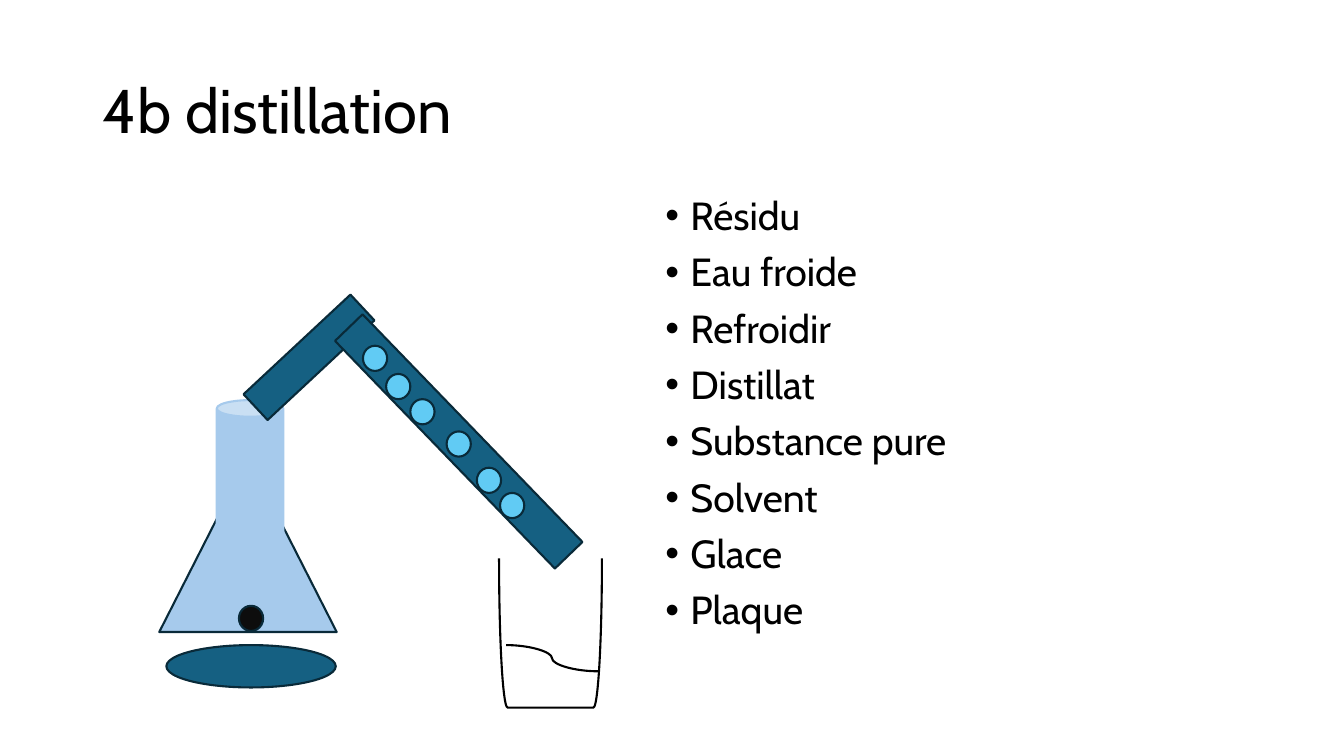
"""Build a slide showing a distillation set-up beside its vocabulary list."""
from dataclasses import dataclass
from typing import Optional

from lxml import etree
from pptx import Presentation
from pptx import util as u
from pptx.dml.color import RGBColor
from pptx.enum import shapes, text
from pptx.oxml.ns import qn

COLORS = {
    "text": "000000", "glass": "A6CAEC", "pipe": "156082",
    "edge": "092A39", "bubble": "61CBF4", "residue": "0D0D0D",
}
FONT = "Cabin"
WORDS = ["Résidu", "Eau froide", "Refroidir", "Distillat",
         "Substance pure", "Solvent", "Glace", "Plaque"]
DROP_SIZE = (0.24, 0.25)
KIND = shapes.MSO_SHAPE


@dataclass
class Part:
    """A preset shape of the apparatus, in inches and degrees."""
    kind: KIND
    left: float
    top: float
    width: float
    height: float
    fill: Optional[str]
    line: str = "edge"
    rotation: float = 0


def drop(left: float, top: float, fill: str = "bubble") -> Part:
    """Describe one small round drop."""
    return Part(KIND.OVAL, left, top, *DROP_SIZE, fill)


APPARATUS = [
    Part(KIND.ISOSCELES_TRIANGLE, 1.58, 4.54, 1.76, 1.73, "glass"),
    Part(KIND.CAN, 2.15, 3.97, 0.66, 1.84, "glass", "glass"),
    Part(KIND.OVAL, 1.65, 6.4, 1.68, 0.42, "pipe"),
    Part(KIND.RECTANGLE, 2.34, 3.37, 1.45, 0.35, "pipe", rotation=317),
    Part(KIND.RECTANGLE, 2.98, 4.19, 3.14, 0.38, "pipe", rotation=46),
    Part(KIND.LEFT_BRACKET, 4.72, 5.77, 1.48, 1.02, None, "text", 270),
    *(drop(x, y) for x, y in [(3.6, 3.43), (4.96, 4.89), (4.73, 4.64),
                              (4.43, 4.28), (4.07, 3.96), (3.83, 3.71)]),
    drop(2.37, 6.01, "residue"),
]


def rgb(name: str) -> RGBColor:
    """Look up a named colour."""
    return RGBColor.from_string(COLORS[name])


def set_line(sp, color: str) -> None:
    """Give a shape or connector its outline."""
    sp.line.color.rgb = rgb(color)
    sp.line.width = u.Pt(1.5)


def add_part(s, part: Part) -> None:
    """Draw one part of the apparatus."""
    box = (part.left, part.top, part.width, part.height)
    sp = s.shapes.add_shape(part.kind, *map(u.Inches, box))
    sp.shadow.inherit = False
    sp.rotation = part.rotation
    if part.fill:
        sp.fill.solid()
        sp.fill.fore_color.rgb = rgb(part.fill)
    else:
        sp.fill.background()
    set_line(sp, part.line)


def add_liquid(s) -> None:
    """Draw the surface of the liquid in the beaker."""
    ends = map(u.Inches, (5.02, 6.4, 5.93, 6.66))
    sp = s.shapes.add_connector(shapes.MSO_CONNECTOR.CURVE, *ends)
    set_line(sp, "text")
    etree.SubElement(sp._element.spPr, qn("a:effectLst"))


def add_bullet(p) -> None:
    """Give a paragraph a hanging bullet."""
    pPr = p._p.get_or_add_pPr()
    pPr.set("marL", str(u.Inches(0.25)))
    pPr.set("indent", str(-u.Inches(0.25)))
    etree.SubElement(pPr, qn("a:buFont"), typeface="Arial")
    etree.SubElement(pPr, qn("a:buChar"), char="•")


def add_text(s, box: tuple, lines: list[str], size: float,
             anchor: text.MSO_ANCHOR, bullets: bool = False) -> None:
    """Write lines of text, one paragraph each."""
    tf = s.shapes.add_textbox(*map(u.Inches, box)).text_frame
    tf.word_wrap = True
    tf.vertical_anchor = anchor
    font = {"name": FONT, "size": u.Pt(size)}
    for i, line in enumerate(lines):
        p = tf.add_paragraph() if i else tf.paragraphs[0]
        p.line_spacing = 0.9
        if bullets:
            p.space_before = u.Pt(10)
            add_bullet(p)
        r = p.add_run()
        r.text = line
        for key, value in font.items():
            setattr(r.font, key, value)
        r.font.color.rgb = rgb("text")


def main() -> None:
    """Build and save the slide."""
    prs = Presentation()
    prs.slide_width, prs.slide_height = u.Inches(13.33), u.Inches(7.5)
    s = prs.slides.add_slide(prs.slide_layouts[6])
    add_text(s, (0.92, 0.4, 11.5, 1.45), ["4b distillation"], 44,
             text.MSO_ANCHOR.MIDDLE)
    add_text(s, (6.5, 1.9, 5.92, 4.9), WORDS, 28,
             text.MSO_ANCHOR.TOP, bullets=True)
    for part in APPARATUS:
        add_part(s, part)
    add_liquid(s)
    prs.save("out.pptx")


if __name__ == "__main__":
    main()
